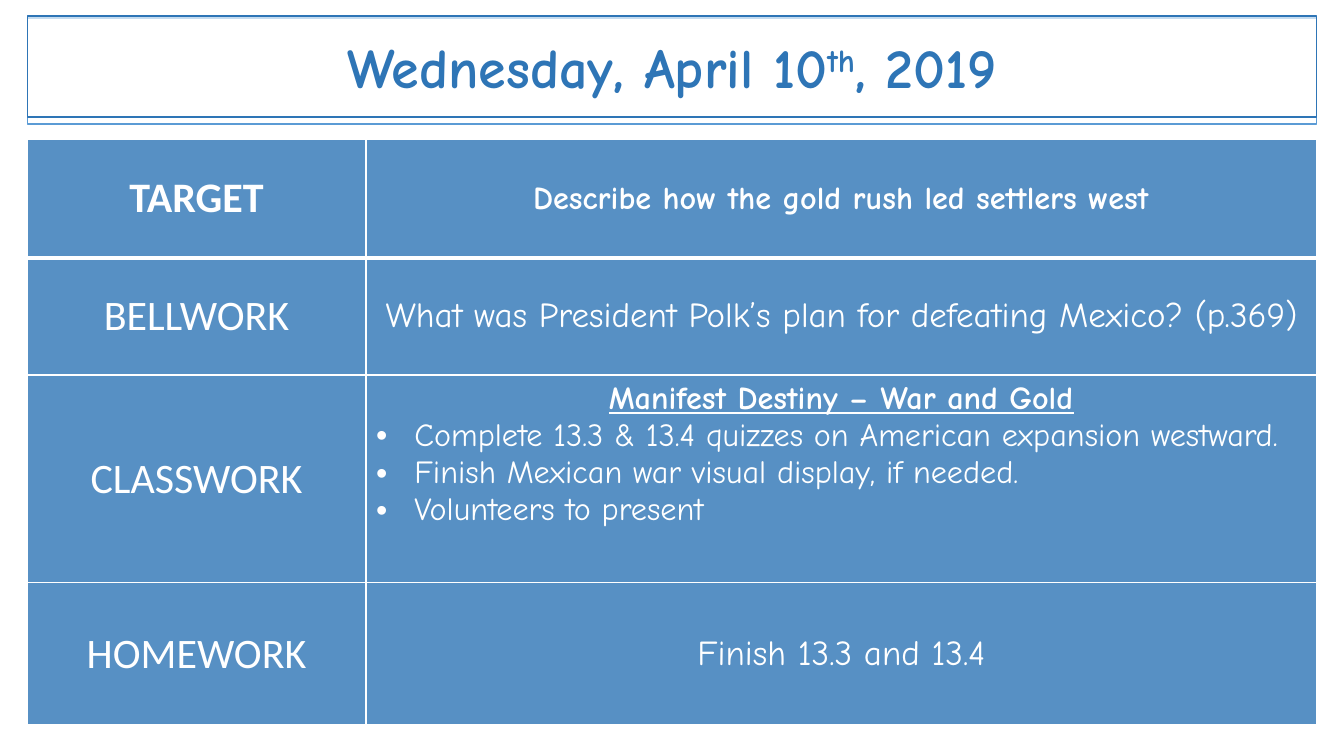
import dataclasses

import lxml.etree
import pptx
import pptx.dml.color
import pptx.enum.shapes
import pptx.enum.text
import pptx.oxml.ns
import pptx.util

PX = 9144
ALIGN = pptx.enum.text.PP_ALIGN
MIDDLE = pptx.enum.text.MSO_ANCHOR.MIDDLE


@dataclasses.dataclass(frozen=True)
class Theme:
    white: str = "FFFFFF"
    blue: str = "2E75B6"
    light_blue: str = "5B9BD5"
    label_font: str = "Calibri"
    body_font: str = "Comic Neue"
    title_size: int = 40
    label_size: int = 30
    answer_size: int = 25
    task_size: int = 23


THEME = Theme()


def px(length):
    return pptx.util.Emu(length * PX)


def rgb(colour):
    return pptx.dml.color.RGBColor.from_string(colour)


def add_child(parent, tag, **attributes):
    child = lxml.etree.SubElement(parent, pptx.oxml.ns.qn(tag))
    for key, value in attributes.items():
        child.set(key, str(value))
    return child


def fill_solid(fill, properties, colour, opacity=100):
    fill.solid()
    fill.fore_color.rgb = rgb(colour)
    if opacity < 100:
        swatch = properties.find(pptx.oxml.ns.qn("a:solidFill"))[0]
        add_child(swatch, "a:alpha", val=opacity * 1000)


def add_run(paragraph, text, font, size, colour, bold=False, underline=False):
    run = paragraph.add_run()
    run.text = text
    run.font.name = font
    run.font.size = pptx.util.Pt(size)
    run.font.color.rgb = rgb(colour)
    run.font.bold = bold
    run.font.underline = underline
    return run


def add_panel(slide, box, line_colour, opacity=100):
    panel = slide.shapes.add_shape(
        pptx.enum.shapes.MSO_SHAPE.RECTANGLE, *map(px, box))
    panel.shadow.inherit = False
    fill_solid(panel.fill, panel._element.spPr, THEME.white, opacity)
    panel.line.color.rgb = rgb(line_colour)
    panel.line.width = pptx.util.Pt(1)
    return panel


def add_date_banner(slide, box):
    banner = add_panel(slide, box, THEME.blue, opacity=65)
    banner.text_frame.word_wrap = True
    banner.text_frame.vertical_anchor = MIDDLE
    date = banner.text_frame.paragraphs[0]
    date.alignment = ALIGN.CENTER
    for text, raised in (("Wednesday, April 10", 0), ("th", 30), (", 2019", 0)):
        run = add_run(date, text, THEME.body_font, THEME.title_size,
                      THEME.blue, bold=True)
        if raised:
            run._r.get_or_add_rPr().set("baseline", str(raised * 1000))


def style_cell(cell, top, bottom):
    properties = cell._tc.get_or_add_tcPr()
    for side, width in (("L", 1), ("R", 1), ("T", top), ("B", bottom)):
        border = add_child(properties, f"a:ln{side}", w=pptx.util.Pt(width))
        add_child(add_child(border, "a:solidFill"), "a:srgbClr", val=THEME.white)
    fill_solid(cell.fill, properties, THEME.blue, opacity=80)


def write_centred(cell, text, font, size, bold=False):
    cell.vertical_anchor = MIDDLE
    paragraph = cell.text_frame.paragraphs[0]
    paragraph.alignment = ALIGN.CENTER
    add_run(paragraph, text, font, size, THEME.white, bold)


def write_classwork(cell, heading, tasks):
    title = cell.text_frame.paragraphs[0]
    title.alignment = ALIGN.CENTER
    add_run(title, heading, THEME.body_font, THEME.task_size, THEME.white,
            bold=True, underline=True)
    for task in tasks:
        item = cell.text_frame.add_paragraph()
        item.alignment = ALIGN.LEFT
        properties = item._p.get_or_add_pPr()
        properties.set("marL", str(px(38)))
        properties.set("indent", str(px(-38)))
        add_child(properties, "a:buFont", typeface="Arial")
        add_child(properties, "a:buChar", char="•")
        add_run(item, task, THEME.body_font, THEME.task_size, THEME.white)


def add_agenda(slide, box):
    left, top, width, height = box
    labels = ("TARGET", "BELLWORK", "CLASSWORK", "HOMEWORK")
    row_heights = (118, 116, 206, height - 440)
    agenda = slide.shapes.add_table(len(labels), 2, *map(px, box)).table
    agenda.first_row = False
    agenda.horz_banding = False
    label_width = 336
    for column, column_width in zip(agenda.columns,
                                    (label_width, width - label_width)):
        column.width = px(column_width)
    for index, (label, row_height) in enumerate(zip(labels, row_heights)):
        agenda.rows[index].height = px(row_height)
        for column in range(2):
            style_cell(agenda.cell(index, column),
                       top=3 if index == 1 else 1,
                       bottom=3 if index == 0 else 1)
        write_centred(agenda.cell(index, 0), label, THEME.label_font,
                      THEME.label_size, bold=index == 0)

    target, bellwork, classwork, homework = (
        agenda.cell(index, 1) for index in range(len(labels)))
    write_centred(target, "Describe how the gold rush led settlers west",
                  THEME.body_font, THEME.task_size, bold=True)
    write_centred(bellwork,
                  "What was President Polk’s plan for defeating Mexico? (p.369)",
                  THEME.body_font, THEME.answer_size)
    write_classwork(classwork, "Manifest Destiny – War and Gold", (
        "Complete 13.3 & 13.4 quizzes on American expansion westward.",
        "Finish Mexican war visual display, if needed.",
        "Volunteers to present"))
    write_centred(homework, "Finish 13.3 and 13.4",
                  THEME.body_font, THEME.answer_size)


def main():
    presentation = pptx.Presentation()
    presentation.slide_width = px(1333)
    presentation.slide_height = px(750)
    slide = presentation.slides.add_slide(presentation.slide_layouts[6])
    left, width = 27, 1279
    add_panel(slide, (left, 18, width, 105), THEME.light_blue)
    add_agenda(slide, (left, 138, width, 581))
    add_date_banner(slide, (left, 16, width, 100))
    presentation.save("out.pptx")


if __name__ == "__main__":
    main()
